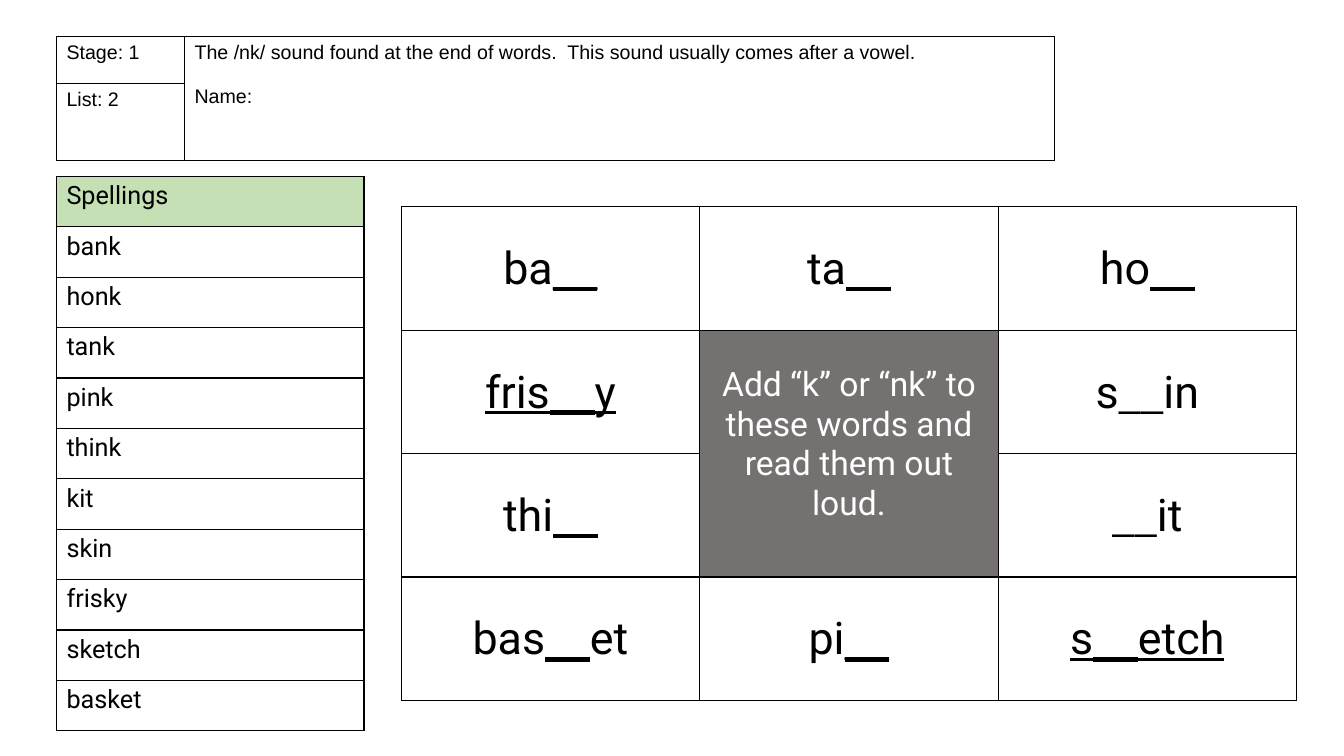
from lxml.etree import SubElement
from pptx import Presentation
from pptx.dml.color import RGBColor
from pptx.enum.text import PP_ALIGN
from pptx.oxml.ns import qn
from pptx.util import Inches, Pt

STAGE, LIST = "Stage: 1", "List: 2"
RULE = ["The /nk/ sound found at the end of words.  This sound usually comes after a vowel.", "Name:"]
SPELLINGS = ["Spellings", "bank", "honk", "tank", "pink", "think", "kit",
             "skin", "frisky", "sketch", "basket"]
TASK = "Add “k” or “nk” to these words and read them out loud."
# Letters before the gap, letters after it, and which part is underlined
PUZZLE = [
    [("ba", "", "gap"), ("ta", "", "gap"), ("ho", "", "gap")],
    [("fris", "y", "all"), TASK, ("s", "in", "none")],
    [("thi", "", "gap"), None, ("", "it", "none")],
    [("bas", "et", "gap"), ("pi", "", "gap"), ("s", "etch", "all")],
]
BLACK, WHITE, GREEN, GREY = "000000", "FFFFFF", "C5E0B4", "767171"
LEFT = 0.56
WORD_TOP = 0.35


def color(hex_code):
    return RGBColor.from_string(hex_code)


def add_grid(slide, left, top, widths, heights):
    """Add an unfilled table with a thin black border round every cell."""
    grid = slide.shapes.add_table(len(heights), len(widths), Inches(left), Inches(top),
                                  Inches(sum(widths)), Inches(sum(heights))).table
    grid.first_row = grid.horz_banding = False
    for column, width in zip(grid.columns, widths):
        column.width = Inches(width)
    for row, height in zip(grid.rows, heights):
        row.height = Inches(height)
    for cell in grid.iter_cells():
        properties = cell._tc.get_or_add_tcPr()
        for side in ("a:lnL", "a:lnR", "a:lnT", "a:lnB"):
            line = SubElement(properties, qn(side), w=str(Pt(1)))
            SubElement(SubElement(line, qn("a:solidFill")), qn("a:srgbClr"), val=BLACK)
        cell.fill.background()
    return grid


def fill_cell(cell, hex_code):
    cell.fill.solid()
    cell.fill.fore_color.rgb = color(hex_code)


def style(paragraph, size, font_name=None, hex_code=BLACK, align=PP_ALIGN.LEFT):
    paragraph.alignment = align
    paragraph.font.size = Pt(size)
    paragraph.font.color.rgb = color(hex_code)
    if font_name:
        paragraph.font.name = font_name


def write(cell, text, *look):
    cell.text = text
    for paragraph in cell.text_frame.paragraphs:
        style(paragraph, *look)


def write_gapped_word(cell, before, after, underlined):
    paragraph = cell.text_frame.paragraphs[0]
    style(paragraph, 32, align=PP_ALIGN.CENTER)
    for part, font_name in ((before, "Roboto"), ("__", "Calibri"), (after, "Roboto")):
        if part:
            run = paragraph.add_run()
            run.text = part
            run.font.name = font_name
            run.font.underline = underlined == "all" or (underlined == "gap" and part == "__")


def add_heading(slide):
    heading = add_grid(slide, LEFT, 0.36, [1.27, 8.63], [0.47, 0.76])
    heading.cell(0, 1).merge(heading.cell(1, 1))
    for cell, text in ((heading.cell(0, 0), STAGE), (heading.cell(1, 0), LIST),
                       (heading.cell(0, 1), "\n".join(RULE))):
        write(cell, text, 14, "Arial")
    heading.cell(0, 1).text_frame.paragraphs[1].space_before = Pt(16)


def add_spellings(slide):
    spellings = add_grid(slide, LEFT, 1.75, [3.05], [0.5] * len(SPELLINGS))
    for cell, word in zip(spellings.iter_cells(), SPELLINGS):
        write(cell, word, 18, "Roboto")
    fill_cell(spellings.cell(0, 0), GREEN)


def add_puzzle(slide):
    puzzle = add_grid(slide, 3.98, 2.05, [2.96] * 3, [1.225] * len(PUZZLE))
    puzzle.cell(1, 1).merge(puzzle.cell(2, 1))
    for row, entries in enumerate(PUZZLE):
        for column, entry in enumerate(entries):
            cell = puzzle.cell(row, column)
            cell.margin_top = Inches(WORD_TOP)
            if entry == TASK:
                write(cell, TASK, 24, "Roboto", WHITE, PP_ALIGN.CENTER)
                fill_cell(cell, GREY)
            elif entry:
                write_gapped_word(cell, *entry)


def main():
    deck = Presentation()
    deck.slide_width, deck.slide_height = Inches(13.33), Inches(7.5)
    slide = deck.slides.add_slide(deck.slide_layouts[6])
    add_spellings(slide)
    add_heading(slide)
    add_puzzle(slide)
    deck.save("out.pptx")


if __name__ == "__main__":
    main()
